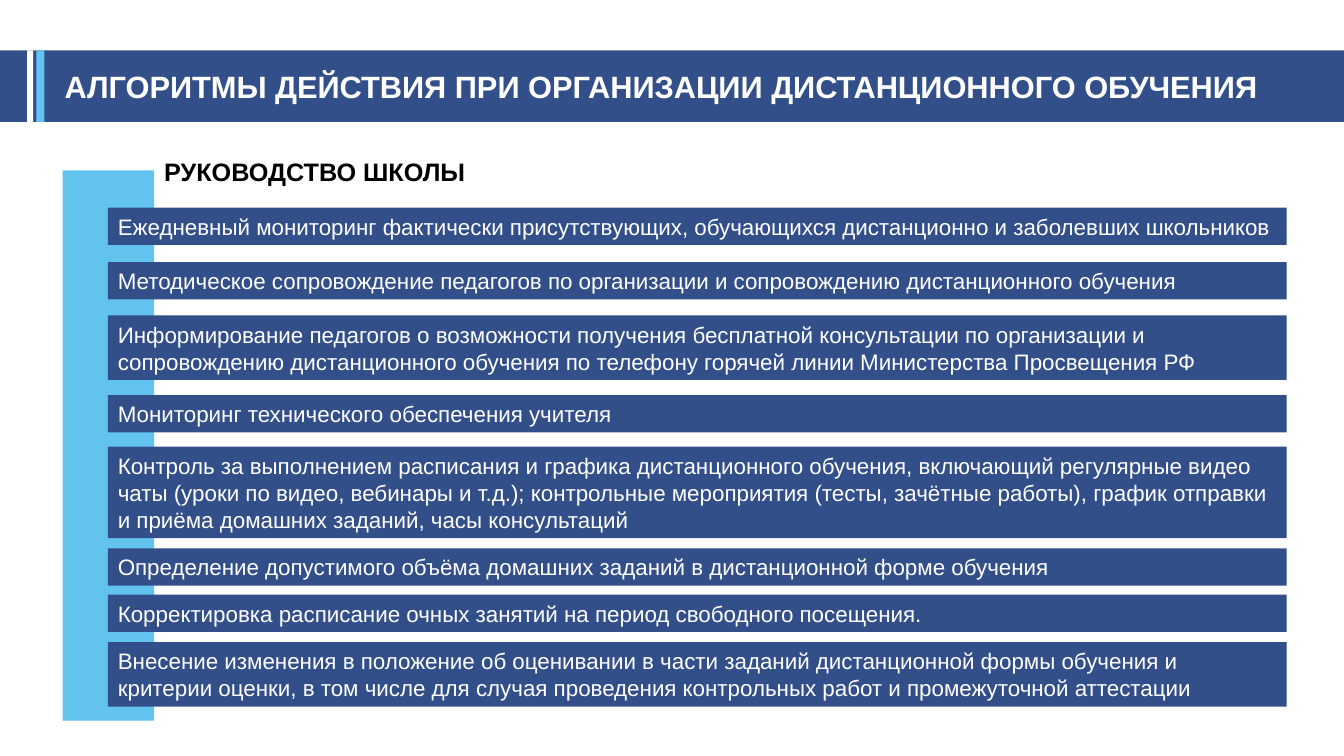
from dataclasses import dataclass

from pptx import Presentation
from pptx.dml.color import RGBColor
from pptx.enum.shapes import MSO_SHAPE
from pptx.enum.text import MSO_ANCHOR, MSO_AUTO_SIZE, PP_ALIGN
from pptx.util import Inches, Pt

RECTANGLE = MSO_SHAPE.RECTANGLE
MIDDLE = MSO_ANCHOR.MIDDLE
FIT_SHAPE = MSO_AUTO_SIZE.SHAPE_TO_FIT_TEXT
LEFT, CENTER = PP_ALIGN.LEFT, PP_ALIGN.CENTER

TITLE = "АЛГОРИТМЫ ДЕЙСТВИЯ ПРИ ОРГАНИЗАЦИИ ДИСТАНЦИОННОГО ОБУЧЕНИЯ"
HEADING = "РУКОВОДСТВО ШКОЛЫ"
# Top in inches, number of text lines, wording
TASKS = [
    (2.06, 1, "Ежедневный мониторинг фактически присутствующих, обучающихся "
              "дистанционно и заболевших школьников"),
    (2.6, 1, "Методическое сопровождение педагогов по организации и "
             "сопровождению дистанционного обучения"),
    (3.13, 2, "Информирование педагогов о возможности получения бесплатной "
              "консультации по организации и сопровождению дистанционного обучения "
              "по телефону горячей линии Министерства Просвещения РФ"),
    (3.92, 1, "Мониторинг технического обеспечения учителя"),
    (4.43, 3, "Контроль за выполнением расписания и графика дистанционного "
              "обучения, включающий регулярные видео чаты (уроки по видео, вебинары "
              "и т.д.); контрольные мероприятия (тесты, зачётные работы), график "
              "отправки и приёма домашних заданий, часы консультаций"),
    (5.44, 1, "Определение допустимого объёма домашних заданий в дистанционной "
              "форме обучения"),
    (5.9, 1, "Корректировка расписание очных занятий на период свободного "
             "посещения."),
    (6.37, 2, "Внесение изменения в положение об оценивании в части заданий "
              "дистанционной формы обучения и критерии оценки, в том числе для "
              "случая проведения контрольных работ и промежуточной аттестации"),
]


@dataclass(frozen=True)
class Theme:
    font: str = "Arial"
    navy: RGBColor = RGBColor(0x33, 0x4F, 0x8A)
    sky: RGBColor = RGBColor(0x62, 0xC3, 0xEF)
    white: RGBColor = RGBColor(0xFF, 0xFF, 0xFF)
    black: RGBColor = RGBColor(0, 0, 0)
    title_size: int = 22
    heading_size: int = 18
    task_size: int = 16


THEME = Theme()
SLIDE_WIDTH, SLIDE_HEIGHT = 13.33, 7.5
BANNER_TOP, BANNER_HEIGHT = 0.5, 0.71
TASK_LEFT, TASK_WIDTH = 1.07, 11.69
LINE_HEIGHT, TASK_PADDING = 0.27, 0.1


def add_rectangle(slide, left, top, width, height, color):
    shape = slide.shapes.add_shape(
        RECTANGLE, Inches(left), Inches(top), Inches(width), Inches(height))
    shape.shadow.inherit = False
    shape.fill.solid()
    shape.fill.fore_color.rgb = color
    shape.line.fill.background()
    return shape


def write_text(shape, text, size, color, bold=False, alignment=LEFT, wrap=True):
    frame = shape.text_frame
    frame.word_wrap = wrap
    frame.auto_size = FIT_SHAPE
    paragraph = frame.paragraphs[0]
    paragraph.text = text
    paragraph.alignment = alignment
    paragraph.font.name = THEME.font
    paragraph.font.size = Pt(size)
    paragraph.font.bold = bold
    paragraph.font.color.rgb = color


def add_label(slide, left, top, width, height, text, size, color, **options):
    box = slide.shapes.add_textbox(
        Inches(left), Inches(top), Inches(width), Inches(height))
    write_text(box, text, size, color, bold=True, **options)


def add_banner(slide):
    add_rectangle(slide, 0, BANNER_TOP, SLIDE_WIDTH, BANNER_HEIGHT, THEME.navy)
    add_label(slide, -0.22, 0.62, 13.55, 0.47, TITLE, THEME.title_size,
              THEME.white, alignment=CENTER)
    for left, width, color in ((0.36, 0.08, THEME.sky), (0.27, 0.06, THEME.white)):
        add_rectangle(slide, left, BANNER_TOP, width, BANNER_HEIGHT, color)


def add_tasks(slide):
    add_rectangle(slide, 0.62, 1.69, 0.91, 5.46, THEME.sky)
    for top, lines, text in TASKS:
        height = TASK_PADDING + lines * LINE_HEIGHT
        bar = add_rectangle(slide, TASK_LEFT, top, TASK_WIDTH, height, THEME.navy)
        bar.text_frame.vertical_anchor = MIDDLE
        write_text(bar, text, THEME.task_size, THEME.white)
    add_label(slide, 1.53, 1.5, 3.22, 0.4, HEADING, THEME.heading_size,
              THEME.black, wrap=False)


def main():
    presentation = Presentation()
    presentation.slide_width = Inches(SLIDE_WIDTH)
    presentation.slide_height = Inches(SLIDE_HEIGHT)
    slide = presentation.slides.add_slide(presentation.slide_layouts[6])
    add_banner(slide)
    add_tasks(slide)
    presentation.save("out.pptx")


if __name__ == "__main__":
    main()
